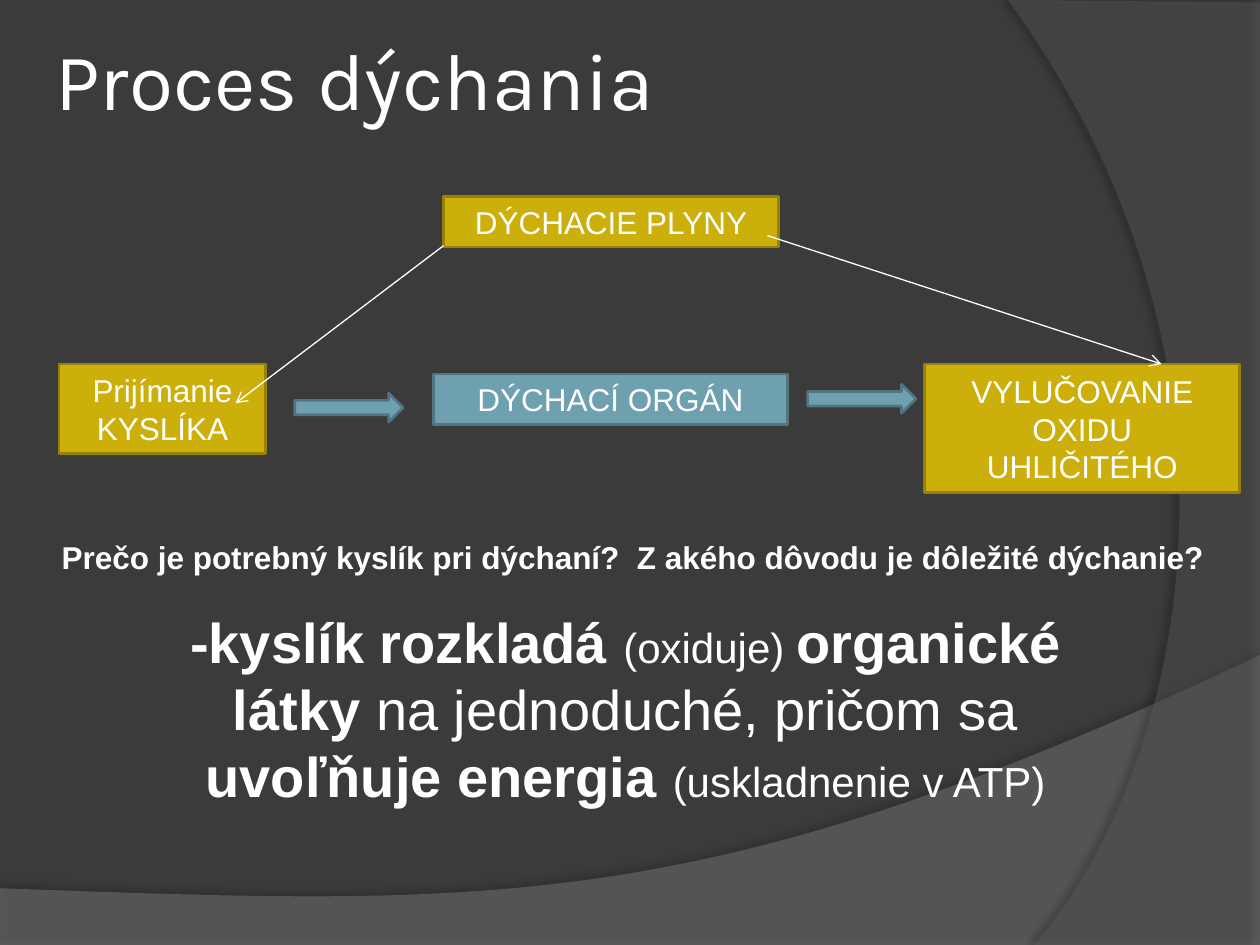
from dataclasses import dataclass

from lxml import etree
from pptx import Presentation
from pptx.dml.color import RGBColor
from pptx.enum.shapes import MSO_CONNECTOR, MSO_SHAPE
from pptx.enum.text import MSO_ANCHOR, MSO_AUTO_SIZE, PP_ALIGN
from pptx.oxml.ns import qn
from pptx.util import Inches, Pt

RECTANGLE, RIGHT_ARROW = MSO_SHAPE.RECTANGLE, MSO_SHAPE.RIGHT_ARROW
STRAIGHT = MSO_CONNECTOR.STRAIGHT
LEFT, CENTER = PP_ALIGN.LEFT, PP_ALIGN.CENTER
TOP, MIDDLE = MSO_ANCHOR.TOP, MSO_ANCHOR.MIDDLE
NO_AUTOFIT = MSO_AUTO_SIZE.NONE

COLUMNS, ROWS = 100, 75
CELL = Inches(10) // COLUMNS
TITLE_ONLY = 5
CURVE_STEPS = 60

WHITE, BLACK, BACKGROUND = "FFFFFF", "000000", "3B3B3B"
GOLD, GOLD_EDGE = "CCAF0A", "978107"
TEAL, TEAL_EDGE = "6EA0B0", "517682"

Point = tuple[float, float]


@dataclass(frozen=True)
class Area:
    left: float
    top: float
    width: float
    height: float

    def emu(self) -> list[int]:
        return [cells(v) for v in (self.left, self.top, self.width, self.height)]


@dataclass(frozen=True)
class Run:
    text: str
    size: float = 18
    bold: bool = False
    font: str = "Arial"


@dataclass(frozen=True)
class Block:
    area: Area
    label: str = ""
    fill: str = GOLD
    edge: str = GOLD_EDGE
    preset: int = RECTANGLE


@dataclass(frozen=True)
class Wave:
    before: tuple[Point, ...]
    controls: tuple[Point, Point]
    end: Point
    fill: str
    opacity: int
    shade: int
    distance: float
    direction: int


WAVES = (
    Wave(((0, 70.5), (0, 75), (100, 75), (100, 52)), ((55.9, 72.9), (39.1, 71.9)),
         (0, 70.5), "7F7F7F", 45, 35, 3.5, 270),
    Wave(((100, 0.2), (100, 75), (82.1, 75)), ((93.5, 61.9), (101.8, 30)),
         (80, 0), "5E5E5E", 40, 45, 4, 180),
)
BLOCKS = (
    Block(Area(4.7, 28.9, 16.4, 7.1), "Prijímanie KYSLÍKA"),
    Block(Area(34.4, 29.7, 28.1, 4), "DÝCHACÍ ORGÁN", TEAL, TEAL_EDGE),
    Block(Area(73.4, 28.9, 25, 10.2), "VYLUČOVANIE OXIDU UHLIČITÉHO"),
    Block(Area(23.4, 31.2, 8.6, 2.3), "", TEAL, TEAL_EDGE, RIGHT_ARROW),
    Block(Area(64.1, 30.5, 8.6, 2.3), "", TEAL, TEAL_EDGE, RIGHT_ARROW),
    Block(Area(35.2, 15.6, 26.6, 4), "DÝCHACIE PLYNY"),
)
GAS_PATHS = (((35.2, 19.5), (18.7, 32)), ((60.9, 18.7), (92.2, 28.9)))

TITLE_AREA = Area(3.9, 0, 90, 12.5)
TITLE = [[Run("Proces dýchania", 46, font="Karla")]]
QUESTION_AREA = Area(3.9, 42.2, 93.8, 4)
QUESTION = [[Run("Prečo je potrebný kyslík pri dýchaní?  Z akého dôvodu je dôležité dýchanie?",
                 bold=True)]]
ANSWER_AREA = Area(13.3, 47.7, 72.7, 17.2)
ANSWER = [
    [Run("-kyslík rozkladá ", 32, True), Run("(oxiduje) ", 24),
     Run("organické látky ", 32, True), Run("na jednoduché, pričom sa", 32)],
    [Run("uvoľňuje energia ", 32, True), Run("(uskladnenie v ATP)", 24)],
]


def cells(count: float) -> int:
    return round(count * CELL)


def apply(target, formats: dict) -> None:
    for attribute, value in formats.items():
        setattr(target, attribute, value)


def paint(fill, color: str) -> None:
    fill.solid()
    fill.fore_color.rgb = RGBColor.from_string(color)


def write(frame, paragraphs: list[list[Run]], align=CENTER, anchor=TOP) -> None:
    apply(frame, {"word_wrap": True, "auto_size": NO_AUTOFIT, "vertical_anchor": anchor})
    for index, runs in enumerate(paragraphs):
        paragraph = frame.add_paragraph() if index else frame.paragraphs[0]
        paragraph.alignment = align
        for item in runs:
            run = paragraph.add_run()
            run.text = item.text
            apply(run.font, {"size": Pt(item.size), "bold": item.bold, "name": item.font})
            paint(run.font.fill, WHITE)


def curve(start: Point, wave: Wave) -> list[Point]:
    first, second = wave.controls
    points = []
    for step in range(1, CURVE_STEPS + 1):
        t = step / CURVE_STEPS
        u = 1 - t
        points.append(tuple(
            u**3 * a + 3 * u * u * t * b + 3 * u * t * t * c + t**3 * d
            for a, b, c, d in zip(start, first, second, wave.end)))
    return points


def add_alpha(color, percent: int) -> None:
    etree.SubElement(color, qn("a:alpha"), val=str(percent * 1000))


def draw_wave(slide, wave: Wave) -> None:
    outline = [*wave.before, *curve(wave.before[-1], wave)]
    points = [(cells(x), cells(y)) for x, y in outline]
    builder = slide.shapes.build_freeform(*points[0])
    builder.add_line_segments(points[1:], close=True)
    shape = builder.convert_to_shape()
    paint(shape.fill, wave.fill)
    shape.line.fill.background()
    shape.shadow.inherit = False
    properties = shape._element.spPr
    add_alpha(properties.find(qn("a:solidFill"))[0], wave.opacity)
    shadow = etree.SubElement(
        properties.find(qn("a:effectLst")), qn("a:outerShdw"), blurRad=str(Pt(4)),
        dist=str(Pt(wave.distance)), dir=str(wave.direction * 60000), rotWithShape="0")
    add_alpha(etree.SubElement(shadow, qn("a:srgbClr"), val=BLACK), wave.shade)


def draw_block(slide, block: Block) -> None:
    shape = slide.shapes.add_shape(block.preset, *block.area.emu())
    shape.shadow.inherit = False
    paint(shape.fill, block.fill)
    paint(shape.line.fill, block.edge)
    shape.line.width = Pt(1.5)
    if block.label:
        write(shape.text_frame, [[Run(block.label)]], anchor=MIDDLE)


def draw_gas_path(slide, start: Point, end: Point) -> None:
    connector = slide.shapes.add_connector(STRAIGHT, *map(cells, (*start, *end)))
    paint(connector.line.fill, WHITE)
    connector.line.width = Pt(0.75)
    properties = connector._element.spPr
    etree.SubElement(properties.find(qn("a:ln")), qn("a:tailEnd"), type="arrow")
    etree.SubElement(properties, qn("a:effectLst"))


def draw_text(slide, area: Area, paragraphs: list[list[Run]], align=CENTER) -> None:
    write(slide.shapes.add_textbox(*area.emu()).text_frame, paragraphs, align)


def draw_title(slide) -> None:
    title = slide.shapes.title
    apply(title, dict(zip(("left", "top", "width", "height"), TITLE_AREA.emu())))
    margins = ("margin_left", "margin_top", "margin_right", "margin_bottom")
    apply(title.text_frame, dict.fromkeys(margins, cells(0.5)))
    write(title.text_frame, TITLE, LEFT, MIDDLE)


def main() -> None:
    deck = Presentation()
    apply(deck, {"slide_width": cells(COLUMNS), "slide_height": cells(ROWS)})
    slide = deck.slides.add_slide(deck.slide_layouts[TITLE_ONLY])
    paint(slide.background.fill, BACKGROUND)
    draw_title(slide)
    for wave in WAVES:
        draw_wave(slide, wave)
    for block in BLOCKS:
        draw_block(slide, block)
    for start, end in GAS_PATHS:
        draw_gas_path(slide, start, end)
    draw_text(slide, QUESTION_AREA, QUESTION, LEFT)
    draw_text(slide, ANSWER_AREA, ANSWER)
    deck.save("out.pptx")


if __name__ == "__main__":
    main()
